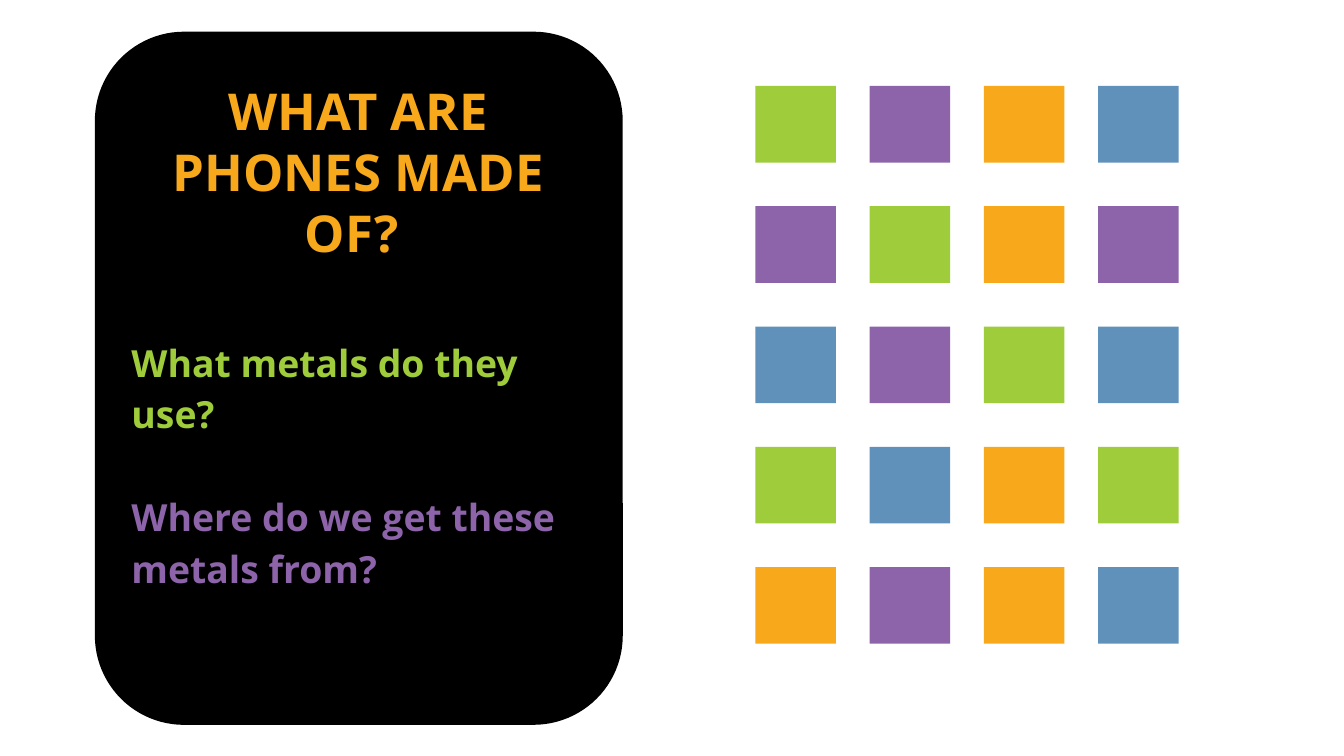
from pptx import Presentation
from pptx.dml.color import RGBColor
from pptx.enum.shapes import MSO_SHAPE
from pptx.enum.text import MSO_ANCHOR, MSO_AUTO_SIZE, PP_ALIGN
from pptx.util import Inches, Pt

RECTANGLE = MSO_SHAPE.RECTANGLE
ROUNDED_RECTANGLE = MSO_SHAPE.ROUNDED_RECTANGLE
TOP = MSO_ANCHOR.TOP
NO_AUTOFIT = MSO_AUTO_SIZE.NONE
CENTER = PP_ALIGN.CENTER
LEFT = PP_ALIGN.LEFT

BLACK = RGBColor(0x00, 0x00, 0x00)
GREEN = RGBColor(0x9F, 0xCC, 0x3B)
PURPLE = RGBColor(0x8D, 0x64, 0xAA)
ORANGE = RGBColor(0xF8, 0xA8, 0x1B)
BLUE = RGBColor(0x60, 0x91, 0xBA)

FONT = "Open Sans"
TITLE_ONLY_LAYOUT = 5

# Widescreen slide, 16:9
SLIDE_WIDTH = Inches(10)
SLIDE_HEIGHT = SLIDE_WIDTH * 9 // 16

# Text column inside the panel
TEXT_LEFT, TEXT_WIDTH = 0.88, 3.57

# Grid of coloured tiles, spread evenly from first to last
GRID_LEFT, GRID_TOP = 5.62, 0.64
COLUMN_STEP = (8.17 - GRID_LEFT) / 3
ROW_STEP = (4.22 - GRID_TOP) / 4
TILE_WIDTH, TILE_HEIGHT = 0.6, 0.57
TILE_ROWS = [
    (GREEN, PURPLE, ORANGE, BLUE),
    (PURPLE, GREEN, ORANGE, PURPLE),
    (BLUE, PURPLE, GREEN, BLUE),
    (GREEN, BLUE, ORANGE, GREEN),
    (ORANGE, PURPLE, ORANGE, BLUE),
]

QUESTIONS = [
    ("What metals do they use?", GREEN),
    ("Where do we get these metals from?", PURPLE),
]


def add_block(slide, kind, left, top, width, height, color):
    shape = slide.shapes.add_shape(
        kind, Inches(left), Inches(top), Inches(width), Inches(height))
    shape.shadow.inherit = False
    shape.fill.solid()
    shape.fill.fore_color.rgb = color
    shape.line.fill.background()
    return shape


def add_panel(slide):
    panel = add_block(slide, ROUNDED_RECTANGLE, 0.72, 0.25, 3.9, 5.13, BLACK)
    panel.line.color.rgb = BLACK
    panel.line.width = Pt(2)
    # Send the panel behind the title
    slide.shapes._spTree.insert(2, panel._element)


def place_text(shape, top, height):
    shape.left, shape.top = Inches(TEXT_LEFT), Inches(top)
    shape.width, shape.height = Inches(TEXT_WIDTH), Inches(height)
    frame = shape.text_frame
    frame.word_wrap = True
    frame.auto_size = NO_AUTOFIT
    frame.vertical_anchor = TOP
    frame.margin_left = frame.margin_right = Inches(0.1)
    frame.margin_top = frame.margin_bottom = Inches(0.1)
    return frame


def write_paragraph(paragraph, text, size, color, alignment):
    paragraph.text = text
    paragraph.alignment = alignment
    paragraph.font.name = FONT
    paragraph.font.size = Pt(size)
    paragraph.font.bold = True
    paragraph.font.color.rgb = color


def write_title(slide):
    frame = place_text(slide.shapes.title, 0.49, 0.63)
    write_paragraph(frame.paragraphs[0], "WHAT ARE PHONES MADE OF? ",
                    27.2, ORANGE, CENTER)


def add_questions(slide):
    frame = place_text(slide.shapes.add_textbox(0, 0, 0, 0), 2.38, 2.62)
    for index, (question, color) in enumerate(QUESTIONS):
        paragraph = frame.add_paragraph() if index else frame.paragraphs[0]
        write_paragraph(paragraph, question, 20, color, LEFT)
        paragraph.line_spacing = 1.15
        paragraph.space_before = Pt(27.6 if index else 0)


def add_tiles(slide):
    for row, colors in enumerate(TILE_ROWS):
        for column, color in enumerate(colors):
            add_block(slide, RECTANGLE,
                      GRID_LEFT + column * COLUMN_STEP,
                      GRID_TOP + row * ROW_STEP,
                      TILE_WIDTH, TILE_HEIGHT, color)


def main():
    presentation = Presentation()
    presentation.slide_width = SLIDE_WIDTH
    presentation.slide_height = SLIDE_HEIGHT
    layout = presentation.slide_layouts[TITLE_ONLY_LAYOUT]
    slide = presentation.slides.add_slide(layout)

    add_panel(slide)
    write_title(slide)
    add_questions(slide)
    add_tiles(slide)
    presentation.save("out.pptx")


if __name__ == "__main__":
    main()
